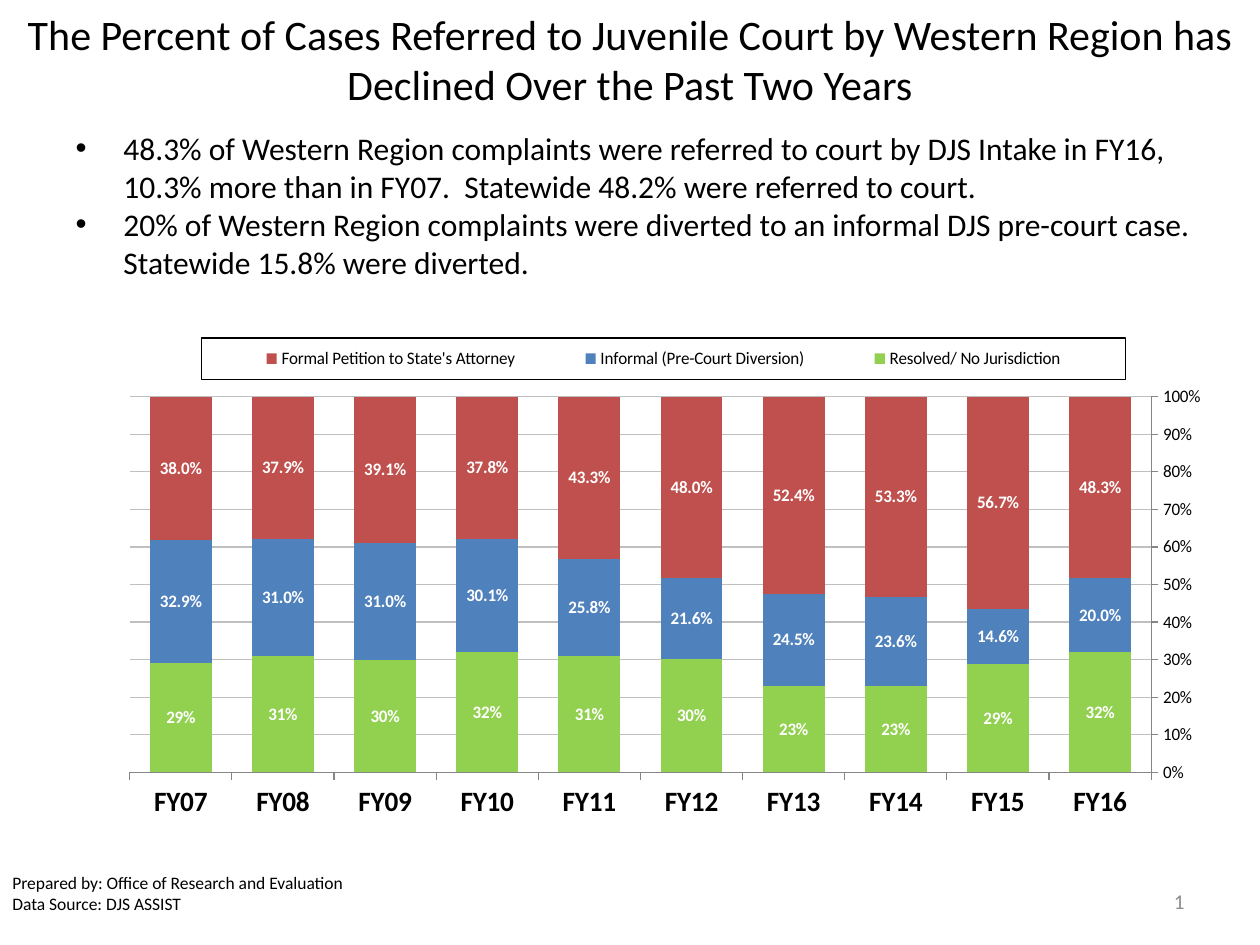
from lxml import etree
from pptx import Presentation
from pptx import util as u
from pptx.chart.data import CategoryChartData
from pptx.dml.color import RGBColor
from pptx.enum import chart as charts
from pptx.enum import text
from pptx.oxml import parse_xml
from pptx.oxml.ns import nsdecls, qn

FONT = "Calibri"
TITLE = "The Percent of Cases Referred to Juvenile Court by Western Region has Declined Over the Past Two Years"
FINDINGS = [
    "48.3% of Western Region complaints were referred to court by DJS Intake in FY16, "
    "10.3% more than in FY07.  Statewide 48.2% were referred to court.",
    "20% of Western Region complaints were diverted to an informal DJS pre-court case.  "
    "Statewide 15.8% were diverted.",
]
CREDITS = ["Prepared by: Office of Research and Evaluation", "Data Source:\u00a0DJS ASSIST"]
YEARS = [f"FY{year:02}" for year in range(16, 6, -1)]
SERIES = [
    ("Resolved/ No Jurisdiction", "92D050", "0%",
     [0.32, 0.29, 0.23, 0.23, 0.3, 0.31, 0.32, 0.3, 0.31, 0.29]),
    ("Informal (Pre-Court Diversion)", "4F81BD", "0.0%",
     [0.2, 0.146, 0.236, 0.245, 0.216, 0.258, 0.301, 0.31, 0.31, 0.329]),
    ("Formal Petition to State's Attorney", "C0504D", "0.0%",
     [0.483, 0.567, 0.533, 0.524, 0.48, 0.433, 0.378, 0.391, 0.379, 0.38]),
]


def color(value):
    return RGBColor.from_string(value)


def set_font(font, size, shade="000000", bold=False):
    font.name = FONT
    font.size = u.Pt(size)
    font.bold = bold
    font.color.rgb = color(shade)


def place(shape, box):
    shape.left, shape.top, shape.width, shape.height = (u.Inches(part) for part in box)


def write(shape, lines, size, align=text.PP_ALIGN.LEFT):
    frame = shape.text_frame
    frame.word_wrap = True
    frame.auto_size = text.MSO_AUTO_SIZE.NONE
    frame.vertical_anchor = text.MSO_ANCHOR.MIDDLE
    for index, line in enumerate(lines):
        para = frame.paragraphs[0] if index == 0 else frame.add_paragraph()
        para.alignment = align
        para.space_before = u.Pt(0)
        span = para.add_run()
        span.text = line
        set_font(span.font, size)
    return frame


def add_title(page, box):
    place(page.shapes.title, box)
    write(page.shapes.title, [TITLE], 24, text.PP_ALIGN.CENTER)


def add_findings(page, box):
    body = page.placeholders[1]
    place(body, box)
    for para in write(body, FINDINGS, 18).paragraphs:
        props = para._p.get_or_add_pPr()
        props.set("marL", str(u.Inches(0.38)))
        props.set("indent", str(u.Inches(-0.38)))
        etree.SubElement(props, qn("a:buFont")).set("typeface", "Arial")
        etree.SubElement(props, qn("a:buChar")).set("char", "•")


def add_credits(page, box):
    credit = page.shapes.add_textbox(*(u.Inches(part) for part in box))
    write(credit, CREDITS, 10)


def add_page_number(page, box):
    number = page.shapes.add_textbox(*(u.Inches(part) for part in box))
    frame = write(number, [], 12)
    para = frame.paragraphs[0]
    para.alignment = text.PP_ALIGN.RIGHT
    para._p.append(parse_xml(
        f'<a:fld {nsdecls("a")} id="{{B6F15528-21DE-4FAA-801E-634DDDAF4B2B}}" type="slidenum">'
        f'<a:rPr lang="en-US" sz="1200"><a:solidFill><a:srgbClr val="8C8C8C"/></a:solidFill>'
        f'<a:latin typeface="{FONT}"/></a:rPr><a:t>4</a:t></a:fld>'))


def make_layout(x, y, width, height, inner=False):
    target = '<c:layoutTarget val="inner"/>' if inner else ""
    return parse_xml(
        f'<c:layout {nsdecls("c")}><c:manualLayout>{target}'
        f'<c:xMode val="edge"/><c:yMode val="edge"/><c:x val="{x}"/><c:y val="{y}"/>'
        f'<c:w val="{width}"/><c:h val="{height}"/></c:manualLayout></c:layout>')


def replace_layout(parent, layout, position):
    for old in parent.findall(qn("c:layout")):
        parent.remove(old)
    parent.insert(position, layout)


def style_axes(chart):
    years, shares = chart.category_axis, chart.value_axis
    for axis, size, bold in ((years, 16, True), (shares, 10, False)):
        set_font(axis.tick_labels.font, size, bold=bold)
        axis.major_tick_mark = charts.XL_TICK_MARK.OUTSIDE
        axis.minor_tick_mark = charts.XL_TICK_MARK.NONE
        axis.format.line.color.rgb = color("868686")
        axis.format.line.width = u.Pt(0.75)
    years.reverse_order = True
    years.crosses = charts.XL_AXIS_CROSSES.MAXIMUM
    shares.minimum_scale, shares.maximum_scale, shares.major_unit = 0, 1, 0.1
    shares.tick_labels.number_format = "0%"
    shares.tick_labels.number_format_is_linked = False
    shares.has_major_gridlines = True
    shares.major_gridlines.format.line.color.rgb = color("BFBFBF")
    shares.major_gridlines.format.line.width = u.Pt(0.75)


def style_legend(chart):
    chart.has_legend = True
    legend = chart.legend
    legend.position = charts.XL_LEGEND_POSITION.RIGHT
    legend.include_in_layout = True
    set_font(legend.font, 10)
    element = legend._element
    replace_layout(element, make_layout(0.11, 0.04, 0.85, 0.08), 1)
    element.find(qn("c:txPr")).addprevious(parse_xml(
        f'<c:spPr {nsdecls("c", "a")}><a:ln w="9525"><a:solidFill>'
        f'<a:srgbClr val="000000"/></a:solidFill></a:ln></c:spPr>'))


def add_outcomes_chart(page, box):
    data = CategoryChartData(number_format="0.0%")
    data.categories = YEARS
    for name, shade, pattern, values in SERIES:
        data.add_series(name, values)
    chart = page.shapes.add_chart(charts.XL_CHART_TYPE.COLUMN_STACKED_100,
                                  *(u.Inches(part) for part in box), data).chart
    chart.has_title = False
    set_font(chart.font, 10)
    plot = chart.plots[0]
    plot.gap_width, plot.overlap, plot.vary_by_categories = 65, 100, False
    for series, (name, shade, pattern, values) in zip(plot.series, SERIES):
        series.format.fill.solid()
        series.format.fill.fore_color.rgb = color(shade)
        labels = series.data_labels
        labels.show_value = True
        labels.position = charts.XL_LABEL_POSITION.CENTER
        labels.number_format = pattern
        labels.number_format_is_linked = False
        set_font(labels.font, 10, "FFFFFF", True)
    style_axes(chart)
    style_legend(chart)
    area = chart._chartSpace.find(".//" + qn("c:plotArea"))
    replace_layout(area, make_layout(0.044, 0.154, 0.94, 0.731, True), 0)


def main():
    deck = Presentation()
    deck.slide_width, deck.slide_height = u.Inches(10), u.Inches(7.5)
    page = deck.slides.add_slide(deck.slide_layouts[1])
    add_title(page, (0, 0.18, 10, 0.57))
    add_findings(page, (0.5, 0.75, 9.25, 1.75))
    add_page_number(page, (7.17, 6.95, 2.33, 0.4))
    add_credits(page, (0, 6.83, 2.92, 0.52))
    add_outcomes_chart(page, (0.65, 2.52, 8.88, 4.08))
    deck.save("out.pptx")


if __name__ == "__main__":
    main()
